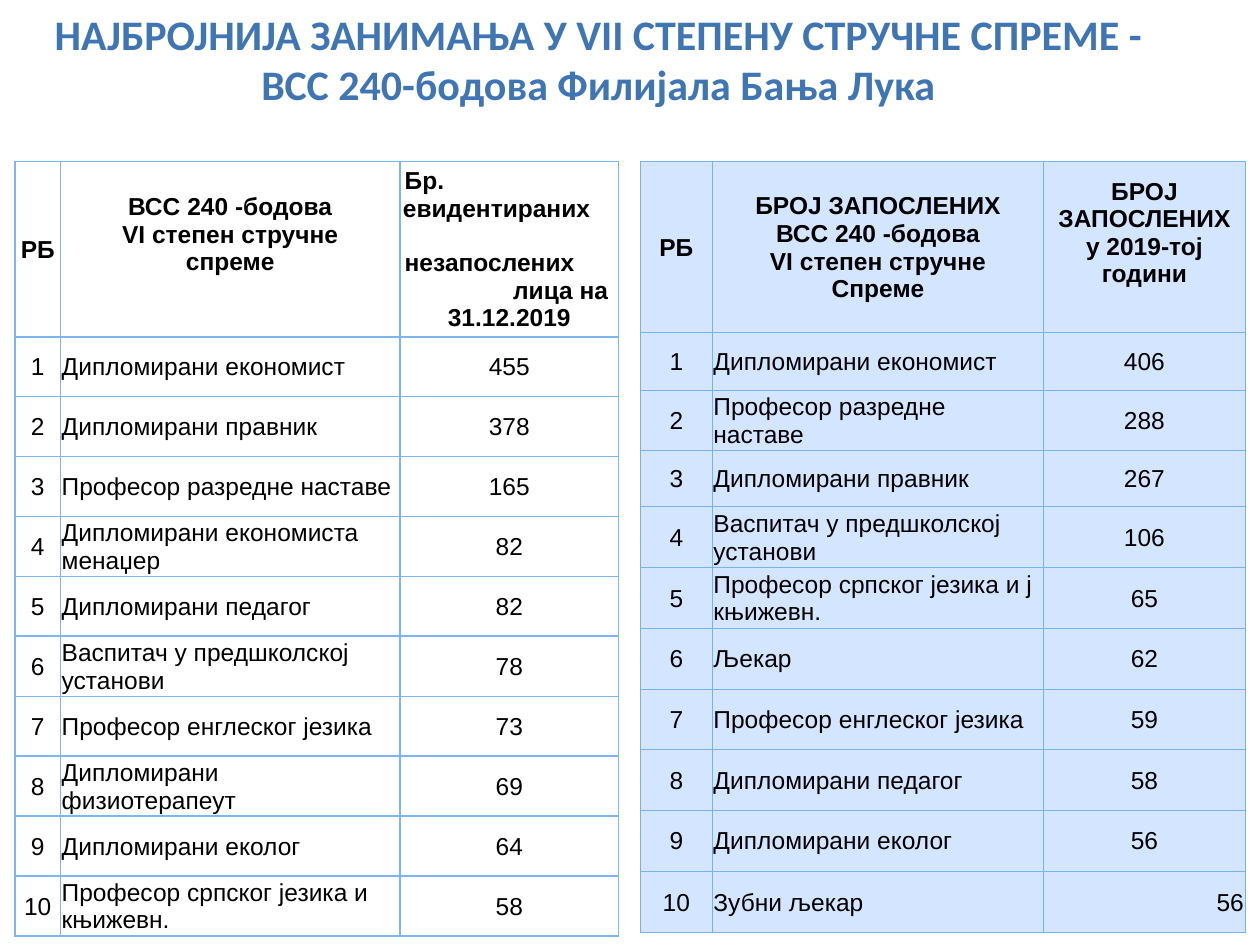
from lxml.etree import SubElement
from pptx import Presentation
from pptx.dml.color import RGBColor
from pptx.enum.text import MSO_ANCHOR, PP_ALIGN
from pptx.oxml.ns import qn
from pptx.util import Pt

LEFT, CENTER, RIGHT = PP_ALIGN.LEFT, PP_ALIGN.CENTER, PP_ALIGN.RIGHT


def write(frame, text, size=14, font="Arial", color="000000", bold=False, align=CENTER):
    for index, line in enumerate(text.split("\n")):
        paragraph = frame.paragraphs[0] if index == 0 else frame.add_paragraph()
        paragraph.alignment = align
        run = paragraph.add_run()
        run.text = line
        run.font.size = Pt(size)
        run.font.name = font
        run.font.bold = bold
        run.font.color.rgb = RGBColor.from_string(color)


def add_border(cell, color, width):
    properties = cell._tc.get_or_add_tcPr()
    for side in ("a:lnL", "a:lnR", "a:lnT", "a:lnB"):
        line = SubElement(properties, qn(side), w=str(Pt(width)))
        fill = SubElement(line, qn("a:solidFill"))
        SubElement(fill, qn("a:srgbClr"), val=color)


presentation = Presentation()
presentation.slide_width = Pt(720)
presentation.slide_height = Pt(540)
slide = presentation.slides.add_slide(presentation.slide_layouts[6])

title = slide.shapes.add_textbox(Pt(0), Pt(6), Pt(684), Pt(55))
title.text_frame.word_wrap = True
title.text_frame.vertical_anchor = MSO_ANCHOR.MIDDLE
write(
    title.text_frame,
    "НАЈБРОЈНИЈА ЗАНИМАЊА У VII СТЕПЕНУ СТРУЧНЕ СПРЕМЕ -\nВСС 240-бодова Филијала Бања Лука",
    size=24, font="Calibri", color="4075B4", bold=True,
)

unemployed = [
    ("Дипломирани економист", 455),
    ("Дипломирани правник", 378),
    ("Професор разредне наставе", 165),
    ("Дипломирани економиста менаџер", 82),
    ("Дипломирани педагог", 82),
    ("Васпитач у предшколској установи", 78),
    ("Професор енглеског језика", 73),
    ("Дипломирани физиотерапеут", 69),
    ("Дипломирани еколог", 64),
    ("Професор српског језика и књижевн.", 58),
]
employed = [
    ("Дипломирани економист", 406),
    ("Професор разредне наставе", 288),
    ("Дипломирани правник", 267),
    ("Васпитач у предшколској установи", 106),
    ("Професор српског језика и ј књижевн.", 65),
    ("Љекар", 62),
    ("Професор енглеског језика", 59),
    ("Дипломирани педагог", 58),
    ("Дипломирани еколог", 56),
    ("Зубни љекар", 56),
]
unemployed_header = (
    "РБ",
    "ВСС 240 -бодова\nVI степен стручне\nспреме",
    "Бр.\nевидентираних\nнезапослених\nлица на\n31.12.2019",
)
employed_header = (
    "РБ",
    "БРОЈ ЗАПОСЛЕНИХ\nВСС 240 -бодова\nVI степен стручне\nСпреме",
    "БРОЈ\nЗАПОСЛЕНИХ\nу 2019-тој години",
)
employed_heights = [98, 33, 32, 32, 35, 34.5, 35, 34.5, 34.5, 35, 35]
layouts = [
    (8.6, unemployed_header, unemployed, [26, 194, 125], [90] + [34.2] * 10, "7DB6EF", 1, None),
    (366, employed_header, employed, [41, 189.5, 115], employed_heights, "77B2ED", 0.75, "D4E5FF"),
]

tables = []
for left, header, occupations, widths, heights, border, thickness, background in layouts:
    rows = [header] + [(number, *entry) for number, entry in enumerate(occupations, 1)]
    frame = slide.shapes.add_table(
        len(rows), len(widths), Pt(left), Pt(92.2), Pt(sum(widths)), Pt(sum(heights))
    )
    table = frame.table
    table.first_row = False
    table.horz_banding = False
    for column, width in zip(table.columns, widths):
        column.width = Pt(width)
    for row_index, (values, height) in enumerate(zip(rows, heights)):
        table.rows[row_index].height = Pt(height)
        for column_index, value in enumerate(values):
            cell = table.cell(row_index, column_index)
            cell.margin_left = cell.margin_right = cell.margin_top = Pt(0.7)
            cell.margin_bottom = Pt(0)
            cell.vertical_anchor = MSO_ANCHOR.MIDDLE
            is_name = row_index > 0 and column_index == 1
            write(
                cell.text_frame, str(value),
                bold=row_index == 0, align=LEFT if is_name else CENTER,
            )
            add_border(cell, border, thickness)
            if background:
                cell.fill.solid()
                cell.fill.fore_color.rgb = RGBColor.from_string(background)
            else:
                cell.fill.background()
    tables.append(table)

unemployed_table, employed_table = tables
unemployed_table.cell(0, 1).margin_bottom = Pt(17)
employed_table.cell(0, 2).margin_bottom = Pt(17)
employed_table.cell(10, 2).text_frame.paragraphs[0].alignment = RIGHT

count_lines = unemployed_table.cell(0, 2).text_frame.paragraphs
for paragraph, indent in zip(count_lines, (2, 1, 2, 64)):
    paragraph.alignment = LEFT
    paragraph._p.get_or_add_pPr().set("marL", str(Pt(indent)))
count_lines[2].space_before = Pt(15.5)

presentation.save("out.pptx")
